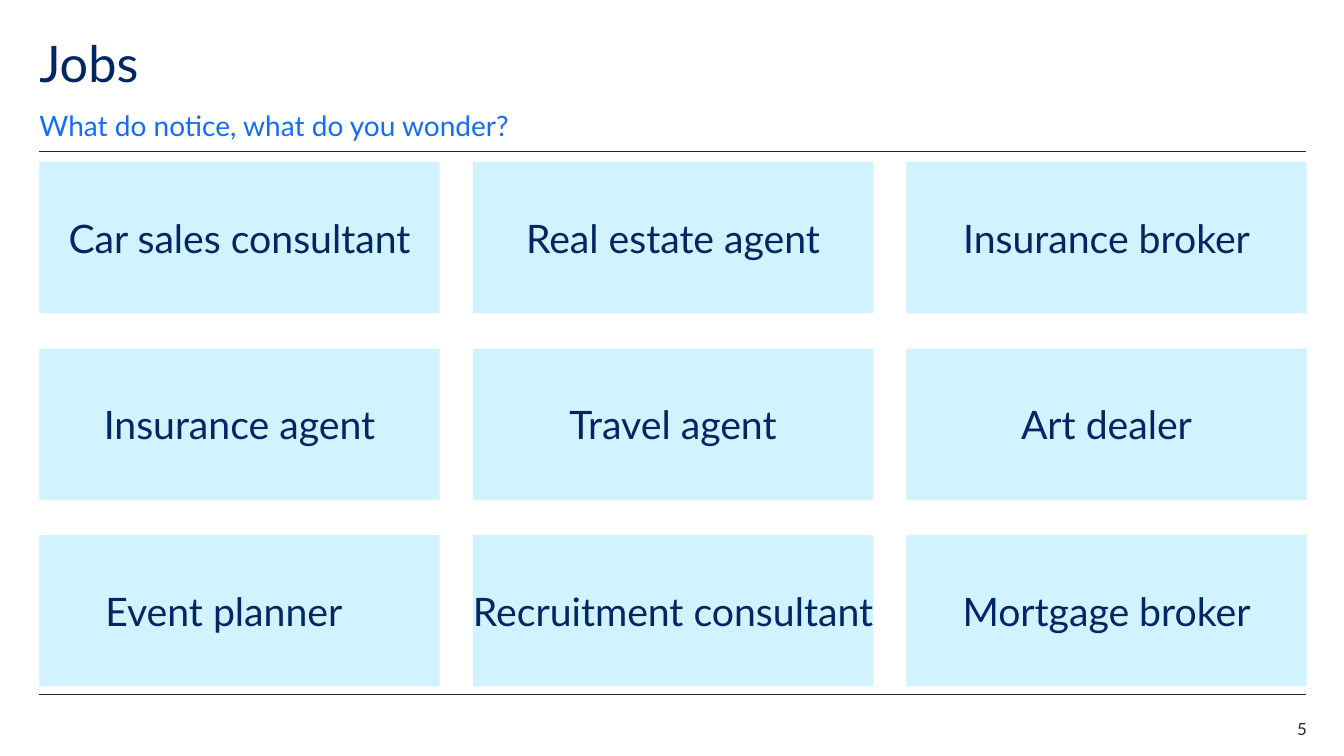
import dataclasses

import lxml.etree
import pptx
import pptx.dml.color
import pptx.enum.shapes
import pptx.enum.text
import pptx.oxml.ns
import pptx.shapes.base
import pptx.slide
import pptx.util

EMU_PER_PX = 9144
ALIGN = pptx.enum.text.PP_ALIGN
ANCHOR = pptx.enum.text.MSO_ANCHOR


@dataclasses.dataclass(frozen=True)
class Theme:
    """Colours, font and type sizes of the slide."""

    font: str = "Lato"
    navy: str = "002664"
    blue: str = "146CFD"
    pale: str = "D1F3FF"
    ink: str = "22272B"
    title: int = 36
    subtitle: int = 20
    job: int = 28
    number: int = 12
    rule: float = 0.5


@dataclasses.dataclass(frozen=True)
class Box:
    """A rectangle in px."""

    x: int
    y: int
    w: int
    h: int


@dataclasses.dataclass(frozen=True)
class Label:
    """A text with its place and style."""

    text: str
    box: Box
    size: int
    color: str
    align: ALIGN = ALIGN.LEFT
    anchor: ANCHOR = ANCHOR.TOP
    line_spacing: float = 1.0
    space_after: int = 0
    inset_right: int = 0


THEME = Theme()
LEFT, RIGHT = 39, 1295
RULES = (150, 689)
GRID_TOP, TILE_W, TILE_H, GAP_X, GAP_Y = 161, 397, 150, 33, 35
JOBS = (
    ("Car sales consultant", "Real estate agent", "Insurance broker"),
    ("Insurance agent", "Travel agent", "Art dealer"),
    ("Event planner", "Recruitment consultant", "Mortgage broker"),
)
INSETS = {"Event planner": 31}
LABELS = (
    Label("Jobs", Box(LEFT, 39, 1102, 60), THEME.title, THEME.navy, line_spacing=0.9),
    Label("What do notice, what do you wonder?", Box(LEFT, 107, 1102, 34),
          THEME.subtitle, THEME.blue, anchor=ANCHOR.BOTTOM, space_after=12),
    Label("5", Box(1217, 713, 79, 20), THEME.number, THEME.ink,
          align=ALIGN.RIGHT, space_after=6),
)


def px(n: int) -> pptx.util.Emu:
    """Turn px into EMU."""
    return pptx.util.Emu(n * EMU_PER_PX)


def rgb(color: str) -> pptx.dml.color.RGBColor:
    """Turn a hex string into a colour."""
    return pptx.dml.color.RGBColor.from_string(color)


def place(box: Box) -> tuple[pptx.util.Emu, ...]:
    """Give left, top, width and height in EMU."""
    return tuple(px(n) for n in dataclasses.astuple(box))


def write(sp: pptx.shapes.base.BaseShape, label: Label) -> None:
    """Set and format the text of a shape."""
    tf = sp.text_frame
    tf.text = label.text
    tf.word_wrap = True
    tf.vertical_anchor = label.anchor
    tf.margin_left = tf.margin_top = tf.margin_bottom = 0
    tf.margin_right = px(label.inset_right)
    p = tf.paragraphs[0]
    p.alignment = label.align
    p.line_spacing = label.line_spacing
    p.space_after = pptx.util.Pt(label.space_after)
    r = p.runs[0]
    r.font.name = THEME.font
    r.font.size = pptx.util.Pt(label.size)
    r.font.color.rgb = rgb(label.color)


def add_label(s: pptx.slide.Slide, label: Label) -> None:
    """Add a text box."""
    write(s.shapes.add_textbox(*place(label.box)), label)


def add_tile(s: pptx.slide.Slide, label: Label) -> None:
    """Add a filled job tile."""
    sp = s.shapes.add_shape(pptx.enum.shapes.MSO_SHAPE.RECTANGLE, *place(label.box))
    sp.shadow.inherit = False
    sp.fill.solid()
    sp.fill.fore_color.rgb = rgb(THEME.pale)
    sp.line.fill.background()
    write(sp, label)


def add_rule(s: pptx.slide.Slide, y: int) -> None:
    """Add a thin horizontal rule."""
    rule = s.shapes.add_connector(
        pptx.enum.shapes.MSO_CONNECTOR.STRAIGHT, px(LEFT), px(y), px(RIGHT), px(y))
    rule.line.color.rgb = rgb(THEME.ink)
    rule.line.width = pptx.util.Pt(THEME.rule)
    lxml.etree.SubElement(rule._element.spPr, pptx.oxml.ns.qn("a:effectLst"))


def main() -> None:
    """Build and save the slide."""
    prs = pptx.Presentation()
    prs.slide_width, prs.slide_height = px(1333), px(750)
    s = prs.slides.add_slide(prs.slide_layouts[6])
    for y in RULES:
        add_rule(s, y)
    for label in LABELS:
        add_label(s, label)
    for row, jobs in enumerate(JOBS):
        for col, job in enumerate(jobs):
            box = Box(LEFT + col * (TILE_W + GAP_X), GRID_TOP + row * (TILE_H + GAP_Y),
                      TILE_W, TILE_H)
            add_tile(s, Label(job, box, THEME.job, THEME.navy, ALIGN.CENTER,
                              ANCHOR.MIDDLE, inset_right=INSETS.get(job, 0)))
    prs.save("out.pptx")


if __name__ == "__main__":
    main()
